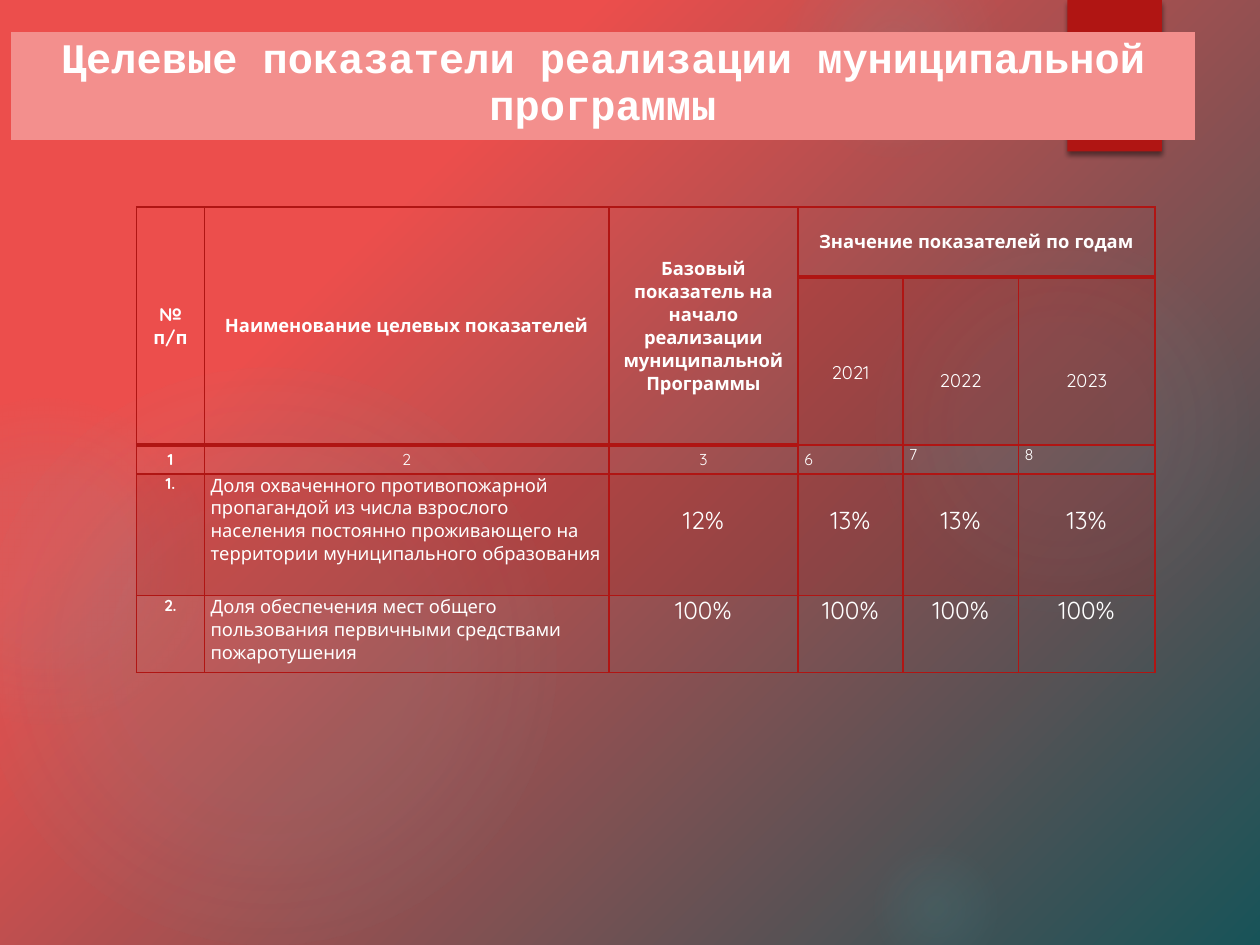
from dataclasses import dataclass

from lxml.etree import SubElement
from pptx import Presentation
from pptx.dml.color import RGBColor as RGB
from pptx.enum.shapes import MSO_SHAPE as SHAPE
from pptx.enum.text import MSO_ANCHOR as ANCHOR, PP_ALIGN as ALIGN
from pptx.oxml import parse_xml
from pptx.oxml.ns import nsdecls, qn
from pptx.util import Pt


@dataclass(frozen=True)
class Theme:
    red: str = "B01513"
    coral: str = "EC4E4C"
    pink: str = "F38F8D"
    teal: str = "185358"
    glow: str = "50B9C1"
    white: str = "FFFFFF"
    title_font: str = "Courier New"
    body_font: str = "Quicksand"
    title_size: float = 24
    value_size: float = 14
    body_size: float = 10.5
    small_size: float = 9


THEME = Theme()


def write_text(frame, text, *, size=THEME.body_size, bold=False, font=THEME.body_font,
               color=THEME.white, align=ALIGN.CENTER):
    paragraph = frame.paragraphs[0]
    paragraph.alignment = align
    run = paragraph.add_run()
    run.text = text
    run.font.name, run.font.size, run.font.bold = font, Pt(size), bold
    run.font.color.rgb = RGB.from_string(color)


class SlideBuilder:
    def __init__(self, slide, theme):
        self.slide = slide
        self.theme = theme

    def background(self):
        fill = self.slide.background.fill
        fill.gradient()
        fill.gradient_angle = 315
        stops = ((0.27, self.theme.coral), (1, self.theme.teal))
        for stop, (position, color) in zip(fill.gradient_stops, stops):
            stop.position = position
            stop.color.rgb = RGB.from_string(color)

    def shape(self, kind, left, top, width, height):
        shape = self.slide.shapes.add_shape(kind, Pt(left), Pt(top), Pt(width), Pt(height))
        shape.shadow.inherit = False
        shape.line.fill.background()
        return shape

    def glow(self, left, top, size, stops):
        """Circle that fades outwards; stops are (position %, opacity %)."""
        circle = self.shape(SHAPE.OVAL, left, top, size, size)
        stop_xml = "".join(
            f'<a:gs pos="{position * 1000}"><a:srgbClr val="{self.theme.glow}">'
            f'<a:alpha val="{opacity * 1000}"/></a:srgbClr></a:gs>'
            for position, opacity in stops)
        properties = circle.element.spPr
        properties.find(qn("a:prstGeom")).addnext(parse_xml(
            f'<a:gradFill {nsdecls("a")} rotWithShape="1"><a:gsLst>{stop_xml}</a:gsLst>'
            '<a:path path="circle"><a:fillToRect l="50000" t="50000" r="50000" b="50000"/>'
            '</a:path></a:gradFill>'))

    def tab(self, left, top, width, height):
        tab = self.shape(SHAPE.RECTANGLE, left, top, width, height)
        tab.fill.solid()
        tab.fill.fore_color.rgb = RGB.from_string(self.theme.red)
        effects = tab.element.spPr.find(qn("a:effectLst"))
        effects.append(parse_xml(
            f'<a:outerShdw {nsdecls("a")} blurRad="{Pt(3)}" dist="{Pt(2)}" dir="5400000">'
            '<a:srgbClr val="000000"><a:alpha val="45000"/></a:srgbClr></a:outerShdw>'))

    def table(self, left, top, columns, rows):
        table = self.slide.shapes.add_table(
            len(rows), len(columns), Pt(left), Pt(top), Pt(sum(columns)), Pt(sum(rows))).table
        table.first_row = table.horz_banding = False
        for column, width in zip(table.columns, columns):
            column.width = Pt(width)
        for row, height in zip(table.rows, rows):
            row.height = Pt(height)
        return table

    def cell_style(self, cell, *, fill=None, opacity=100, border=None, bottom=1):
        """Fill and border colours; None leaves that part clear."""
        properties = cell._tc.get_or_add_tcPr()
        if fill:
            cell.fill.solid()
            cell.fill.fore_color.rgb = RGB.from_string(fill)
            if opacity < 100:
                color = properties.find(qn("a:solidFill")).find(qn("a:srgbClr"))
                SubElement(color, qn("a:alpha"), val=str(opacity * 1000))
        else:
            cell.fill.background()
        paint = (f'<a:solidFill><a:srgbClr val="{border}"/></a:solidFill>' if border
                 else '<a:noFill/>')
        for index, side in enumerate("LRTB"):
            width = Pt(bottom if side == "B" else 1)
            properties.insert(index, parse_xml(
                f'<a:ln{side} {nsdecls("a")} w="{width}">{paint}</a:ln{side}>'))

    def cell_text(self, cell, text, *, anchor=ANCHOR.TOP, inset=0, **style):
        cell.margin_left = cell.margin_right = Pt(3.6)
        cell.margin_top, cell.margin_bottom = Pt(inset), 0
        cell.vertical_anchor = anchor
        write_text(cell.text_frame, text, **style)


TITLE = "Целевые показатели реализации муниципальной программы"
HEADINGS = ["№ п/п", "Наименование целевых показателей",
            "Базовый показатель на начало реализации муниципальной Программы",
            "Значение показателей по годам"]
YEARS = ["2021", "2022", "2023"]
COLUMN_NUMBERS = ["1", "2", "3", "6", "7", "8"]
INDICATORS = [
    ("1.", "Доля охваченного противопожарной пропагандой из числа взрослого населения "
           "постоянно проживающего на территории муниципального образования",
     ["12%", "13%", "13%", "13%"], 17.5),
    ("2.", "Доля обеспечения мест общего пользования первичными средствами пожаротушения",
     ["100%"] * 4, 0),
]
GLOWS = [
    (496, 132, 222, ((0, 7), (36, 6), (69, 0))),
    (448, -36, 126, ((0, 14), (36, 7), (73, 0))),
    (496, 480, 78, ((0, 9), (36, 5), (66, 0))),
    (-12, 210, 330, ((0, 11), (36, 10), (75, 0))),
    (-66, 228, 186, ((0, 8), (36, 8), (72, 0))),
]


def add_title(builder):
    theme = builder.theme
    banner = builder.table(6, 18.2, [677], [48]).cell(0, 0)
    builder.cell_style(banner, fill=theme.pink)
    write_text(banner.text_frame, TITLE, size=theme.title_size, bold=True,
               font=theme.title_font)


def add_indicators(builder):
    theme = builder.theme
    table = builder.table(78, 118.3, [38.8, 231.2, 108, 60, 66, 78], [40, 96, 16.5, 69.5, 44])
    cell = table.cell

    # Borders and fills
    for row in range(len(table.rows)):
        for column in range(len(table.columns)):
            tinted = row == 3 or (row == 1 and column >= 3)
            heading_edge = row == 0 or (row == 1 and column < 3)
            builder.cell_style(cell(row, column), fill=theme.red if tinted else None,
                               opacity=20, border=theme.red, bottom=2 if heading_edge else 1)

    # Headings
    for column in range(3):
        cell(0, column).merge(cell(1, column))
    cell(0, 3).merge(cell(0, 5))
    for column, heading in enumerate(HEADINGS):
        builder.cell_text(cell(0, column), heading, anchor=ANCHOR.MIDDLE, bold=True)
    for column, year in enumerate(YEARS, 3):
        first = column == 3
        builder.cell_text(cell(1, column), year, inset=13 if first else 52.5,
                          anchor=ANCHOR.MIDDLE if first else ANCHOR.TOP)
    for column, number in enumerate(COLUMN_NUMBERS):
        builder.cell_text(cell(2, column), number, size=theme.small_size, bold=column == 0,
                          anchor=ANCHOR.MIDDLE if column < 4 else ANCHOR.TOP,
                          align=ALIGN.CENTER if column < 3 else ALIGN.LEFT)

    # Indicators
    for row, (number, name, values, inset) in enumerate(INDICATORS, 3):
        builder.cell_text(cell(row, 0), number, size=theme.small_size, bold=True)
        builder.cell_text(cell(row, 1), name, align=ALIGN.LEFT)
        for column, value in enumerate(values, 2):
            builder.cell_text(cell(row, column), value, size=theme.value_size, inset=inset)


def main():
    deck = Presentation()
    deck.slide_width, deck.slide_height = Pt(720), Pt(540)
    builder = SlideBuilder(deck.slides.add_slide(deck.slide_layouts[6]), THEME)

    # Backdrop
    builder.background()
    for glow in GLOWS:
        builder.glow(*glow)
    builder.tab(610, 0, 54, 86.5)

    # Content
    add_title(builder)
    add_indicators(builder)
    deck.save("out.pptx")


if __name__ == "__main__":
    main()
